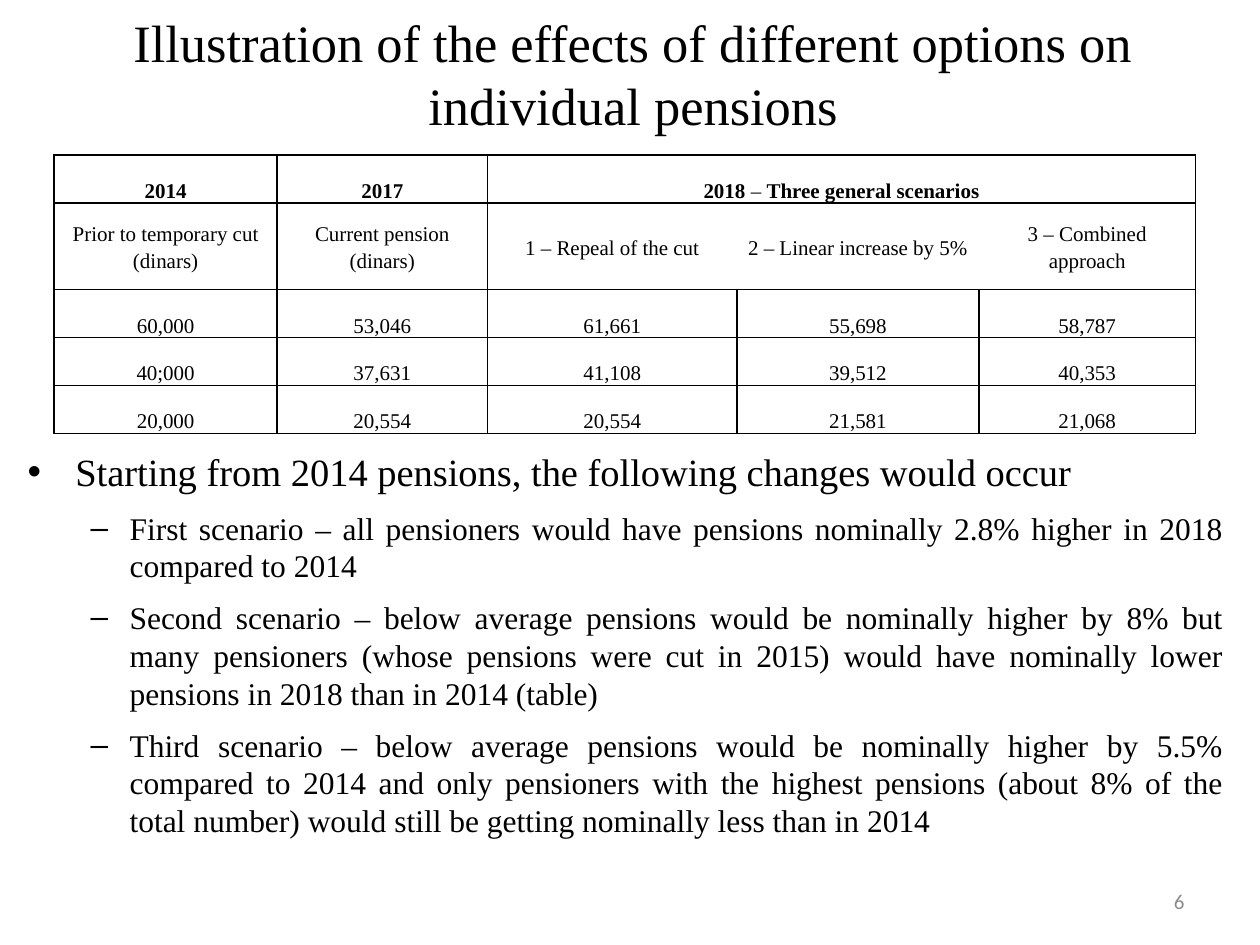
import dataclasses

import lxml.etree
import pptx
import pptx.dml.color
import pptx.enum.text
import pptx.oxml.ns
import pptx.util

Inches = pptx.util.Inches
Pt = pptx.util.Pt
Align = pptx.enum.text.PP_ALIGN
Anchor = pptx.enum.text.MSO_ANCHOR
qn = pptx.oxml.ns.qn


@dataclasses.dataclass(frozen=True)
class Theme:
    serif: str = "Times New Roman"
    sans: str = "Calibri"
    ink: str = "000000"
    muted: str = "8C8C8C"
    title: int = 30
    lead: int = 22
    detail: int = 18
    small: int = 12


class PensionSlide:
    """Holds the theme and the slide that is being filled."""

    def __init__(self, slide, theme):
        self.slide = slide
        self.theme = theme

    def style(self, paragraph, size, align, bold=False, font=None, color=None):
        paragraph.alignment = align
        for run in paragraph.runs:
            run.font.size = Pt(size)
            run.font.name = font or self.theme.serif
            run.font.bold = bold
            run.font.color.rgb = pptx.dml.color.RGBColor.from_string(color or self.theme.ink)

    def text_frame(self, box, anchor):
        frame = self.slide.shapes.add_textbox(*map(Inches, box)).text_frame
        frame.word_wrap = True
        frame.vertical_anchor = anchor
        return frame

    def label(self, box, text, size, align, font=None, color=None):
        frame = self.text_frame(box, Anchor.MIDDLE)
        frame.text = text
        self.style(frame.paragraphs[0], size, align, font=font, color=color)

    def bullets(self, box, entries):
        frame = self.text_frame(box, Anchor.TOP)
        levels = [("•", self.theme.lead, 0.38, 0.38), ("–", self.theme.detail, 0.81, 0.31)]
        for index, (level, text) in enumerate(entries):
            marker, size, margin, hanging = levels[level]
            paragraph = frame.add_paragraph() if index else frame.paragraphs[0]
            paragraph.text = text
            paragraph.level = level
            paragraph.space_before = paragraph.space_after = Pt(4)
            self.style(paragraph, size, Align.JUSTIFY)
            properties = paragraph._p.get_or_add_pPr()
            properties.set("marL", str(Inches(margin)))
            properties.set("indent", str(-Inches(hanging)))
            lxml.etree.SubElement(properties, qn("a:buFont")).set("typeface", "Arial")
            lxml.etree.SubElement(properties, qn("a:buChar")).set("char", marker)

    def borders(self, cell, hidden):
        properties = cell._tc.get_or_add_tcPr()
        for position, side in enumerate("LRTB"):
            line = lxml.etree.Element(qn(f"a:ln{side}"), w=str(Pt(1)))
            if side in hidden:
                lxml.etree.SubElement(line, qn("a:noFill"))
            else:
                fill = lxml.etree.SubElement(line, qn("a:solidFill"))
                lxml.etree.SubElement(fill, qn("a:srgbClr")).set("val", self.theme.ink)
            properties.insert(position, line)

    def table(self, box, widths, heights, rows):
        frame = self.slide.shapes.add_table(len(rows), len(widths), *map(Inches, box))
        table = frame.table
        for column, width in zip(table.columns, widths):
            column.width = Inches(width)
        for row, height in zip(table.rows, heights):
            row.height = Inches(height)
        for r, texts in enumerate(rows):
            for c, text in enumerate(texts):
                cell = table.cell(r, c)
                cell.fill.background()
                cell.margin_left = cell.margin_right = Inches(0.07)
                cell.margin_top = cell.margin_bottom = 0
                cell.vertical_anchor = Anchor.MIDDLE if r == 1 else Anchor.BOTTOM
                paragraph = cell.text_frame.paragraphs[0]
                paragraph.line_spacing = 1.15
                for part in text:
                    paragraph.add_run().text = part
                self.style(paragraph, self.theme.small, Align.CENTER, bold=r == 0)
                hidden = ("L" if c > 2 else "") + ("R" if 2 <= c < 4 else "")
                self.borders(cell, hidden if r == 1 else "")
        scenarios = table.cell(0, 2)
        scenarios.merge(table.cell(0, 4))
        scenarios.text_frame.paragraphs[0].runs[1].font.bold = False


def main():
    deck = pptx.Presentation()
    deck.slide_width, deck.slide_height = Inches(10), Inches(7.5)
    theme = Theme()
    page = PensionSlide(deck.slides.add_slide(deck.slide_layouts[6]), theme)

    page.label((0.2, 0.24, 9.65, 0.68),
               "Illustration of the effects of different options on individual pensions",
               theme.title, Align.CENTER)
    page.label((7.17, 6.95, 2.33, 0.4), "6", theme.small, Align.RIGHT, theme.sans, theme.muted)

    headings = [["2014"], ["2017"], ["2018 ", "– ", "Three general scenarios"], [], []]
    options = ["Prior to temporary cut (dinars)", "Current pension (dinars)",
               "1 – Repeal of the cut", "2 – Linear increase by 5%", "3 – Combined approach"]
    pensions = [
        ["60,000", "53,046", "61,661", "55,698", "58,787"],
        ["40;000", "37,631", "41,108", "39,512", "40,353"],
        ["20,000", "20,554", "20,554", "21,581", "21,068"],
    ]
    rows = [headings] + [[[text] for text in row] for row in [options, *pensions]]
    page.table((0.43, 1.23, 9.06, 2.2), [1.77, 1.67, 1.98, 1.92, 1.72],
               [0.38, 0.69, 0.38, 0.38, 0.38], rows)

    page.bullets((0.12, 3.51, 9.69, 3.7), [
        (0, "Starting from 2014 pensions, the following changes would occur"),
        (1, "First scenario – all pensioners would have pensions nominally 2.8% higher in 2018 "
            "compared to 2014"),
        (1, "Second scenario – below average pensions would be nominally higher by 8% but many "
            "pensioners (whose pensions were cut in 2015) would have nominally lower pensions "
            "in 2018 than in 2014 (table)"),
        (1, "Third scenario – below average pensions would be nominally higher by 5.5% compared "
            "to 2014 and only pensioners with the highest pensions (about 8% of the total number) "
            "would still be getting nominally less than in 2014"),
    ])
    deck.save("out.pptx")


if __name__ == "__main__":
    main()
